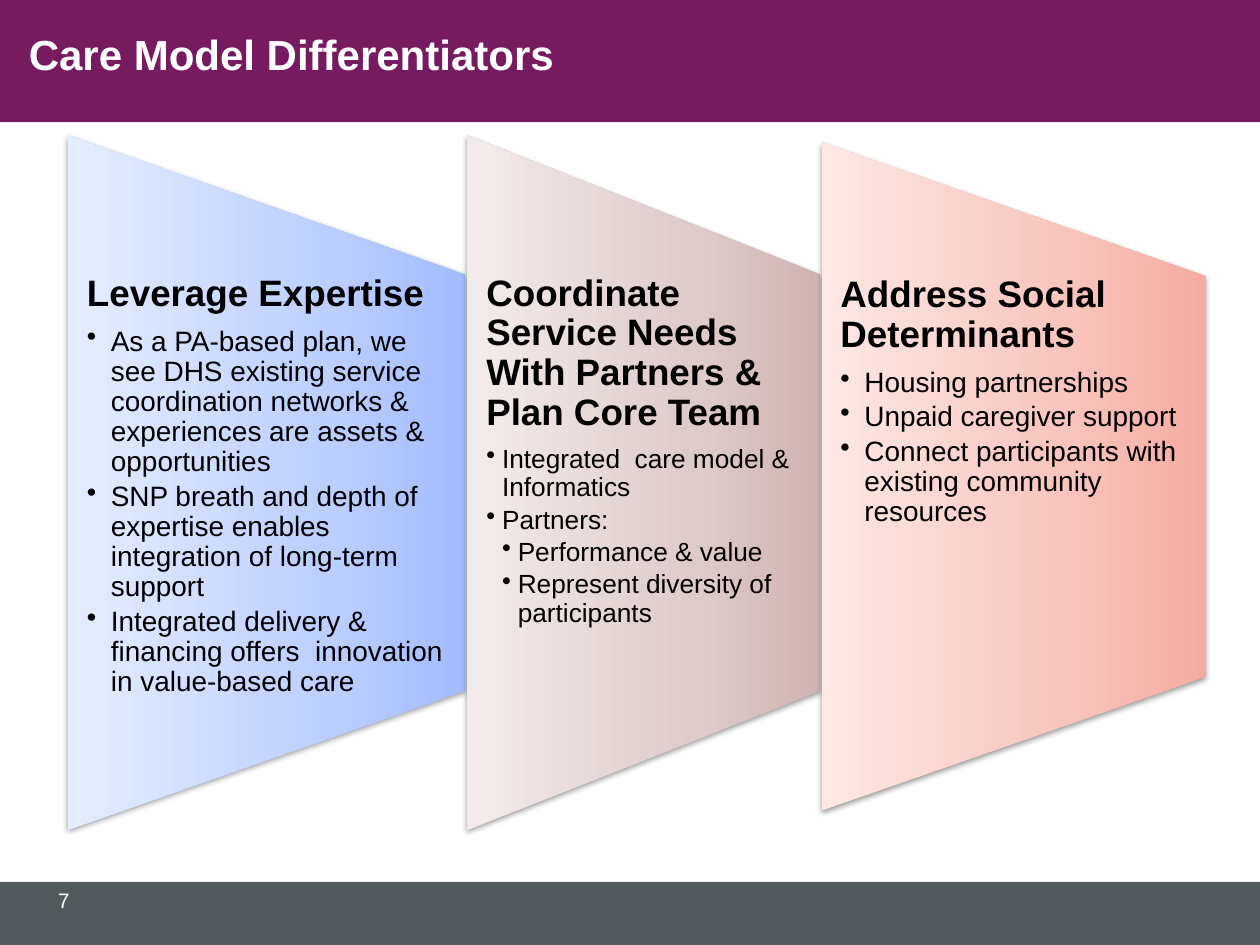
from lxml.etree import SubElement
from pptx import Presentation
from pptx.dml.color import RGBColor
from pptx.enum.shapes import MSO_SHAPE
from pptx.enum.text import MSO_ANCHOR, PP_ALIGN
from pptx.oxml import parse_xml
from pptx.oxml.ns import nsdecls, qn
from pptx.util import Inches, Pt

COLORS = {
    "plum": "771B61", "slate": "535A5D", "white": "FFFFFF", "black": "000000",
    "blue": ("A2BCFF", "BDCFFF", "E6EDFF"),
    "mauve": ("D0B4B3", "DDCBCA", "F3EBEB"),
    "coral": ("F6ABA0", "F8C4BD", "FDE8E5"),
}
FONT = "Arial"
STOPS = (0, 35, 100)

# Top edge of the footer wave, left to right
WAVE = [
    (0, 6.45), (0.11, 6.49), (0.24, 6.54), (0.43, 6.59), (0.67, 6.66),
    (0.97, 6.74), (1.32, 6.83), (1.72, 6.91), (2.05, 6.98), (2.42, 7.04),
    (2.81, 7.11), (3.23, 7.16), (3.69, 7.22), (4.17, 7.26), (4.68, 7.31),
    (5.21, 7.34), (5.78, 7.36), (6.38, 7.38), (6.79, 7.38), (7.18, 7.38),
    (7.71, 7.37), (8.19, 7.35), (8.61, 7.33), (8.98, 7.3), (9.38, 7.27),
    (9.68, 7.24), (9.89, 7.21), (10, 7.19),
]

# Left, middle, width, height, shades, heading, bullet size, indent, bullets
PANELS = [
    (0.54, 3.83, 3.15, 5.51, "blue", "Leverage Expertise", 16, 0.19, [
        (1, "As a PA-based plan, we see DHS existing service coordination "
            "networks & experiences are assets & opportunities"),
        (1, "SNP breath and depth of expertise enables integration of "
            "long-term support"),
        (1, "Integrated delivery & financing offers  innovation in "
            "value-based care"),
    ]),
    (3.71, 3.83, 2.8, 5.51, "mauve",
     "Coordinate Service Needs With Partners & Plan Core Team", 15, 0.125, [
         (1, "Integrated  care model & Informatics"),
         (1, "Partners:"),
         (2, "Performance & value"),
         (2, "Represent diversity of participants"),
     ]),
    (6.52, 3.78, 3.05, 5.3, "coral", "Address Social Determinants", 16, 0.19, [
        (1, "Housing partnerships"),
        (1, "Unpaid caregiver support"),
        (1, "Connect participants with existing community resources"),
    ]),
]


def paint(shape, color):
    shape.shadow.inherit = False
    shape.fill.solid()
    shape.fill.fore_color.rgb = RGBColor.from_string(COLORS[color])
    shape.line.fill.background()


def style(para, size, color, bold=False):
    for run in para.runs:
        font = run.font
        font.name, font.size, font.bold = FONT, Pt(size), bold
        font.color.rgb = RGBColor.from_string(COLORS[color])


def add_box(slide, left, top, width, height, insets=(0, 0)):
    """Add a wrapping text box with side and top insets; return its frame."""
    box = slide.shapes.add_textbox(*map(Inches, (left, top, width, height)))
    frame = box.text_frame
    frame.word_wrap = True
    frame.margin_left = frame.margin_right = Inches(insets[0])
    frame.margin_top = Inches(insets[1])
    frame.margin_bottom = 0
    return frame


def add_wave(slide):
    build = slide.shapes.build_freeform(*WAVE[0], scale=Inches(1))
    build.add_line_segments(WAVE[1:] + [(10, 7.5), (0, 7.5)], close=True)
    paint(build.convert_to_shape(), "slate")


def add_banner(slide):
    bar = slide.shapes.add_shape(
        MSO_SHAPE.RECTANGLE, 0, 0, Inches(10), Inches(0.97))
    paint(bar, "plum")
    frame = add_box(slide, 0.13, 0.22, 9.51, 0.82, (0.1, 0.02))
    para = frame.paragraphs[0]
    para.text = "Care Model Differentiators"
    para.line_spacing = Pt(27.8)
    style(para, 24, "white", True)


def shade(shape, tones):
    """Give a shape a three-tone gradient and a soft shadow below."""
    shape.line.fill.background()
    stops = "".join(
        f'<a:gs pos="{pos * 1000}"><a:srgbClr val="{tone}"/></a:gs>'
        for pos, tone in zip(STOPS, tones))
    fill = parse_xml(
        f'<a:gradFill {nsdecls("a")} rotWithShape="1"><a:gsLst>{stops}'
        '</a:gsLst><a:lin ang="16200000" scaled="1"/></a:gradFill>')
    glow = parse_xml(
        f'<a:effectLst {nsdecls("a")}><a:outerShdw blurRad="40000" '
        'dist="20000" dir="5400000" rotWithShape="0"><a:srgbClr val="000000">'
        '<a:alpha val="38000"/></a:srgbClr></a:outerShdw></a:effectLst>')
    props = shape._element.spPr
    props.find(qn("a:prstGeom")).addnext(fill)
    props.find(qn("a:ln")).addnext(glow)


def add_bullet(para, level, indent):
    para.level = level
    props = para._p.get_or_add_pPr()
    props.set("marL", str(Inches(indent * level)))
    props.set("indent", str(-Inches(indent)))
    SubElement(props, qn("a:buChar")).set("char", "•")


def add_panel(slide, left, mid, width, height, tone, head, size, indent, items):
    """Add a sideways trapezoid with a heading and bullets in its middle."""
    shape = slide.shapes.add_shape(
        MSO_SHAPE.FLOWCHART_MANUAL_OPERATION,
        Inches(left + (width - height) / 2), Inches(mid - width / 2),
        Inches(height), Inches(width))
    shape.rotation = 270
    shade(shape, COLORS[tone])

    frame = add_box(slide, left, mid - 0.3 * height, width, 0.6 * height,
                    (0.15, 0))
    para = frame.paragraphs[0]
    para.text = head
    para.line_spacing = 0.9
    para.space_after = Pt(21 * 0.35)
    style(para, 21, "black", True)
    for level, text in items:
        para = frame.add_paragraph()
        para.text = text
        para.line_spacing = 0.9
        para.space_after = Pt(size * 0.15)
        add_bullet(para, level, indent)
        style(para, size, "black")


def add_number(slide):
    frame = add_box(slide, 0.27, 6.79, 0.47, 0.71)
    frame.vertical_anchor = MSO_ANCHOR.MIDDLE
    para = frame.paragraphs[0]
    para.text = "7"
    para.alignment = PP_ALIGN.CENTER
    style(para, 12, "white")


def main():
    deck = Presentation()
    deck.slide_width, deck.slide_height = Inches(10), Inches(7.5)
    slide = deck.slides.add_slide(deck.slide_layouts[6])
    add_wave(slide)
    add_banner(slide)
    for panel in PANELS:
        add_panel(slide, *panel)
    add_number(slide)
    deck.save("out.pptx")


if __name__ == "__main__":
    main()
